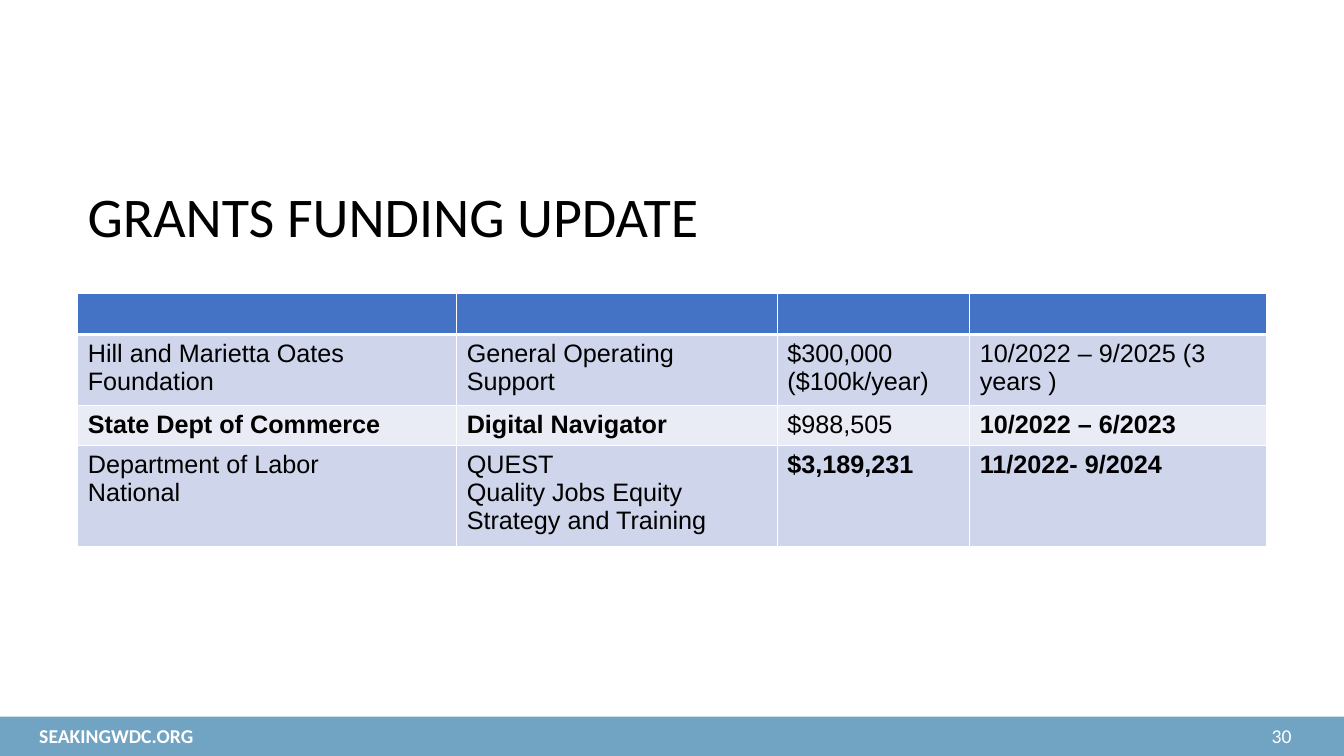
import pptx
import pptx.util
import pptx.dml.color
import pptx.enum.shapes
import pptx.enum.text
import pptx.oxml.ns
import lxml.etree

Cm = pptx.util.Cm
Pt = pptx.util.Pt
RGBColor = pptx.dml.color.RGBColor

BLACK = RGBColor(0x00, 0x00, 0x00)
WHITE = RGBColor(0xFF, 0xFF, 0xFF)
FOOTER_BLUE = RGBColor(0x71, 0xA3, 0xC2)
HEADER_BLUE = RGBColor(0x44, 0x72, 0xC4)
BANDS = [RGBColor(0xCF, 0xD5, 0xEA), RGBColor(0xE9, 0xEB, 0xF5)]

COLUMN_WIDTHS = [9.55, 8.08, 4.85, 7.49]
ROW_HEIGHTS = [1.04, 1.68, 0.98, 2.38]

# Each grant: (text, bold) per column
GRANTS = [
    [("Hill and Marietta Oates Foundation", False),
     ("General Operating Support", False),
     ("$300,000\n($100k/year)", False),
     ("10/2022 – 9/2025 (3 years )", False)],
    [("State Dept of Commerce", True),
     ("Digital Navigator", True),
     ("$988,505", False),
     ("10/2022 – 6/2023", True)],
    [("Department of Labor\nNational", False),
     ("QUEST\nQuality Jobs Equity Strategy and Training", False),
     ("$3,189,231", True),
     ("11/2022- 9/2024", True)],
]


def write(tf, text, size=18, font="Calibri", color=BLACK, bold=False, spacing=None):
    """Fill a text frame, one paragraph per line of text."""
    for i, line in enumerate(text.split("\n")):
        p = tf.paragraphs[0] if i == 0 else tf.add_paragraph()
        if spacing:
            p.line_spacing = spacing
        r = p.add_run()
        r.text = line
        r.font.size = Pt(size)
        r.font.name = font
        r.font.color.rgb = color
        r.font.bold = bold


def add_text(s, left, top, width, height, text, wrap=True, **fmt):
    sp = s.shapes.add_textbox(Cm(left), Cm(top), Cm(width), Cm(height))
    sp.text_frame.word_wrap = wrap
    write(sp.text_frame, text, **fmt)


def set_borders(cell, bottom=1):
    """Draw white lines on all four sides of a cell."""
    tc_pr = cell._tc.get_or_add_tcPr()
    qn = pptx.oxml.ns.qn
    for side, width in (("L", 1), ("R", 1), ("T", 1), ("B", bottom)):
        ln = lxml.etree.SubElement(tc_pr, qn(f"a:ln{side}"), w=str(Pt(width)))
        fill = lxml.etree.SubElement(ln, qn("a:solidFill"))
        lxml.etree.SubElement(fill, qn("a:srgbClr"), val=str(WHITE))


def add_footer(s, left, top, width, height):
    bar = s.shapes.add_shape(pptx.enum.shapes.MSO_SHAPE.RECTANGLE,
                             Cm(left), Cm(top), Cm(width), Cm(height))
    bar.shadow.inherit = False
    bar.fill.solid()
    bar.fill.fore_color.rgb = FOOTER_BLUE
    bar.line.fill.background()
    text_top = top + 0.05
    add_text(s, left + width - 2.07, text_top, 1.32, 0.86, "30",
             wrap=False, size=14, color=WHITE)
    add_text(s, left + 0.74, text_top, 4.98, 0.86, "SEAKINGWDC.ORG",
             wrap=False, size=14, color=WHITE, bold=True)


def add_grants_table(s, left, top):
    table = s.shapes.add_table(
        len(ROW_HEIGHTS), len(COLUMN_WIDTHS), Cm(left), Cm(top),
        Cm(sum(COLUMN_WIDTHS)), Cm(sum(ROW_HEIGHTS))).table
    for column, width in zip(table.columns, COLUMN_WIDTHS):
        column.width = Cm(width)
    for row, height in zip(table.rows, ROW_HEIGHTS):
        row.height = Cm(height)

    # Empty header row
    for cell in table.rows[0].cells:
        set_borders(cell, bottom=3)
        cell.fill.solid()
        cell.fill.fore_color.rgb = HEADER_BLUE

    # Banded grant rows
    for i, grant in enumerate(GRANTS):
        for cell, (text, bold) in zip(table.rows[i + 1].cells, grant):
            set_borders(cell)
            cell.fill.solid()
            cell.fill.fore_color.rgb = BANDS[i % 2]
            write(cell.text_frame, text, font="Arial", bold=bold)


def main():
    prs = pptx.Presentation()
    prs.slide_width, prs.slide_height = Cm(33.87), Cm(19.05)
    s = prs.slides.add_slide(prs.slide_layouts[6])
    add_footer(s, 0, 18.06, 33.87, 0.99)
    add_text(s, 1.96, 4.65, 29.95, 2.74, "GRANTS FUNDING UPDATE",
             size=40, spacing=0.9)
    add_grants_table(s, 1.96, 7.39)
    prs.save("out.pptx")


if __name__ == "__main__":
    main()
